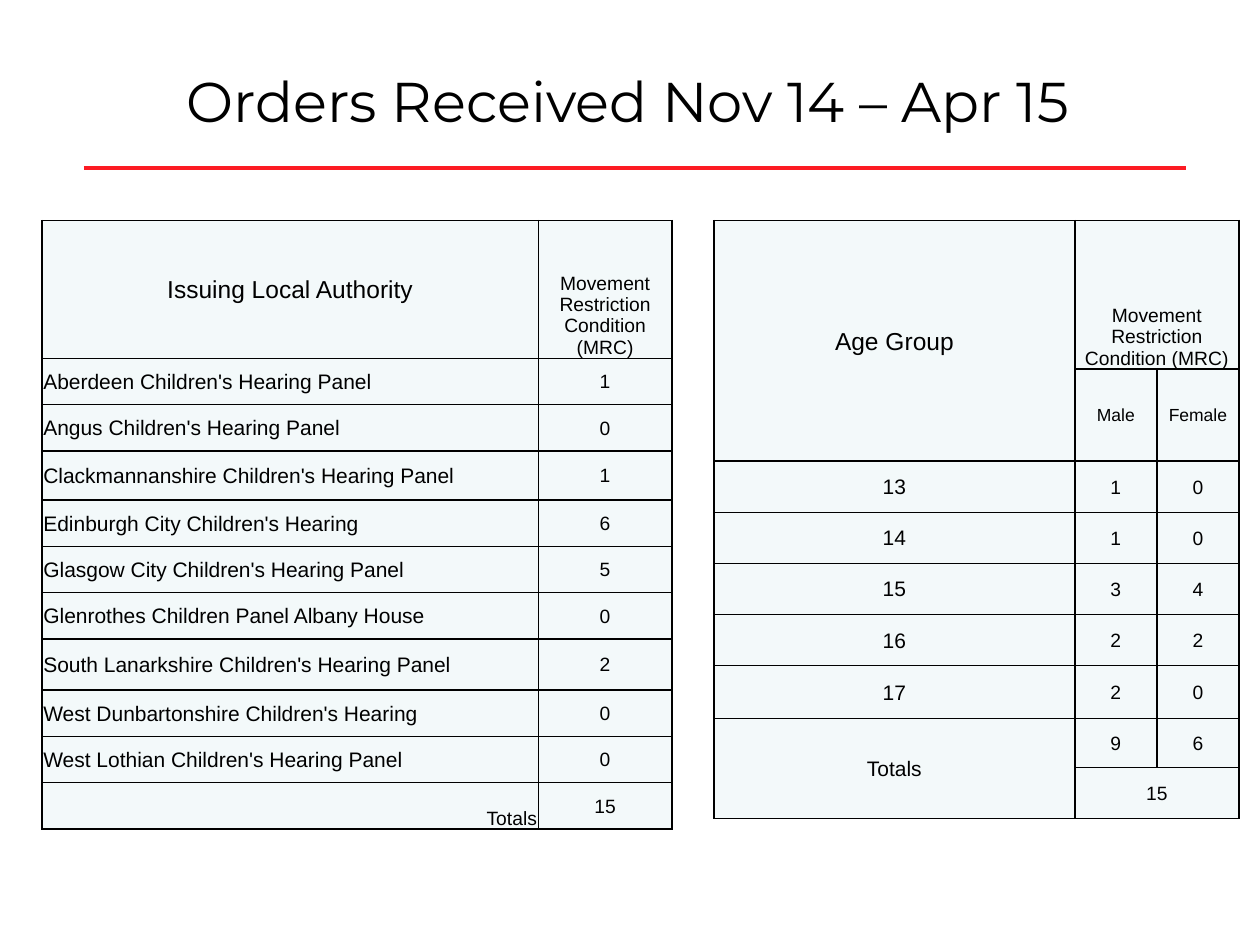
from lxml.etree import SubElement
from pptx import Presentation
from pptx.dml.color import RGBColor
from pptx.enum.shapes import MSO_CONNECTOR
from pptx.enum.text import MSO_ANCHOR, PP_ALIGN
from pptx.oxml import parse_xml
from pptx.oxml.ns import nsdecls, qn
from pptx.util import Pt

BLACK, RED, PALE = "000000", "FC1B23", "F3F9FA"
MRC = "Movement Restriction Condition (MRC)"

PANELS = [
    ("Aberdeen Children's Hearing Panel", 1),
    ("Angus Children's Hearing Panel", 0),
    ("Clackmannanshire Children's Hearing Panel", 1),
    ("Edinburgh City Children's Hearing", 6),
    ("Glasgow City Children's Hearing Panel", 5),
    ("Glenrothes Children Panel Albany House", 0),
    ("South Lanarkshire Children's Hearing Panel", 2),
    ("West Dunbartonshire Children's Hearing", 0),
    ("West Lothian Children's Hearing Panel", 0),
]
AGES = [(13, 1, 0), (14, 1, 0), (15, 3, 4), (16, 2, 2), (17, 2, 0)]


def color(code):
    return RGBColor.from_string(code)


def style(frame, size, font="Arial", align=PP_ALIGN.CENTER):
    for para in frame.paragraphs:
        para.alignment = align
        for run in para.runs:
            run.font.size = Pt(size)
            run.font.name = font
            run.font.color.rgb = color(BLACK)


def add_title(slide, left, top, width, height):
    box = slide.shapes.add_textbox(Pt(left), Pt(top), Pt(width), Pt(height))
    frame = box.text_frame
    frame.word_wrap = True
    frame.vertical_anchor = MSO_ANCHOR.MIDDLE
    frame.text = "Orders Received Nov 14 – Apr 15"
    style(frame, 32, "Montserrat")


def add_rule(slide, left, top, width):
    line = slide.shapes.add_connector(
        MSO_CONNECTOR.STRAIGHT, Pt(left), Pt(top), Pt(left + width), Pt(top))
    line.line.color.rgb = color(RED)
    line.line.width = Pt(2.25)
    SubElement(line._element.spPr, qn("a:effectLst"))


def add_grid(slide, left, top, cols, rows):
    """Add an empty table with pale cells and thin black borders."""
    table = slide.shapes.add_table(
        len(rows), len(cols), Pt(left), Pt(top), Pt(sum(cols)), Pt(sum(rows))).table
    table.first_row = table.horz_banding = False
    for col, width in zip(table.columns, cols):
        col.width = Pt(width)
    for row, height in zip(table.rows, rows):
        row.height = Pt(height)
    for cell in table.iter_cells():
        cell.margin_left = cell.margin_right = cell.margin_top = Pt(0.75)
        cell.margin_bottom = 0
        props = cell._tc.get_or_add_tcPr()
        for side in "LRTB":
            props.append(parse_xml(
                f'<a:ln{side} {nsdecls("a")} w="{Pt(1)}"><a:solidFill>'
                f'<a:srgbClr val="{BLACK}"/></a:solidFill></a:ln{side}>'))
        cell.fill.solid()
        cell.fill.fore_color.rgb = color(PALE)
    return table


def put(cell, text, size=11, align=PP_ALIGN.CENTER, anchor=MSO_ANCHOR.MIDDLE):
    cell.text_frame.text = str(text)
    cell.vertical_anchor = anchor
    style(cell.text_frame, size, align=align)


def add_panels(slide, left, top):
    rows = [78.8] + [26.5] * 10
    rows[3], rows[7] = 28, 29.2
    table = add_grid(slide, left, top, [283.6, 76.4], rows)
    # Header
    put(table.cell(0, 0), "Issuing Local Authority", 14)
    put(table.cell(0, 1), MRC, anchor=MSO_ANCHOR.BOTTOM)
    # One row for each panel
    for row, (name, count) in enumerate(PANELS, 1):
        put(table.cell(row, 0), name, 12, PP_ALIGN.LEFT)
        put(table.cell(row, 1), count)
    # Totals
    last = len(rows) - 1
    put(table.cell(last, 0), "Totals", 11, PP_ALIGN.RIGHT, MSO_ANCHOR.BOTTOM)
    put(table.cell(last, 1), sum(count for _, count in PANELS))


def add_ages(slide, left, top):
    rows = [85, 52.6] + [29.2] * 4 + [30.2, 28, 29.2]
    table = add_grid(slide, left, top, [206.2, 46.9, 46.9], rows)
    # Header and totals span two rows, or two columns
    for first, end in [((0, 0), (1, 0)), ((0, 1), (0, 2)),
                       ((7, 0), (8, 0)), ((8, 1), (8, 2))]:
        table.cell(*first).merge(table.cell(*end))
    put(table.cell(0, 0), "Age Group", 14)
    put(table.cell(0, 1), MRC, anchor=MSO_ANCHOR.BOTTOM)
    put(table.cell(1, 1), "Male", 10)
    put(table.cell(1, 2), "Female", 10)
    # One row for each age, then the sums
    sums = [sum(age[i] for age in AGES) for i in (1, 2)]
    for row, (name, *counts) in enumerate(AGES + [("Totals", *sums)], 2):
        put(table.cell(row, 0), name, 12)
        for col, count in enumerate(counts, 1):
            put(table.cell(row, col), count)
    put(table.cell(8, 1), sum(sums))


def main():
    deck = Presentation()
    deck.slide_width, deck.slide_height = Pt(720), Pt(540)
    slide = deck.slides.add_slide(deck.slide_layouts[6])
    add_rule(slide, 48, 96, 630)
    add_title(slide, 40, 18, 638, 78)
    add_panels(slide, 24, 126)
    add_ages(slide, 408, 126)
    deck.save("out.pptx")


if __name__ == "__main__":
    main()
